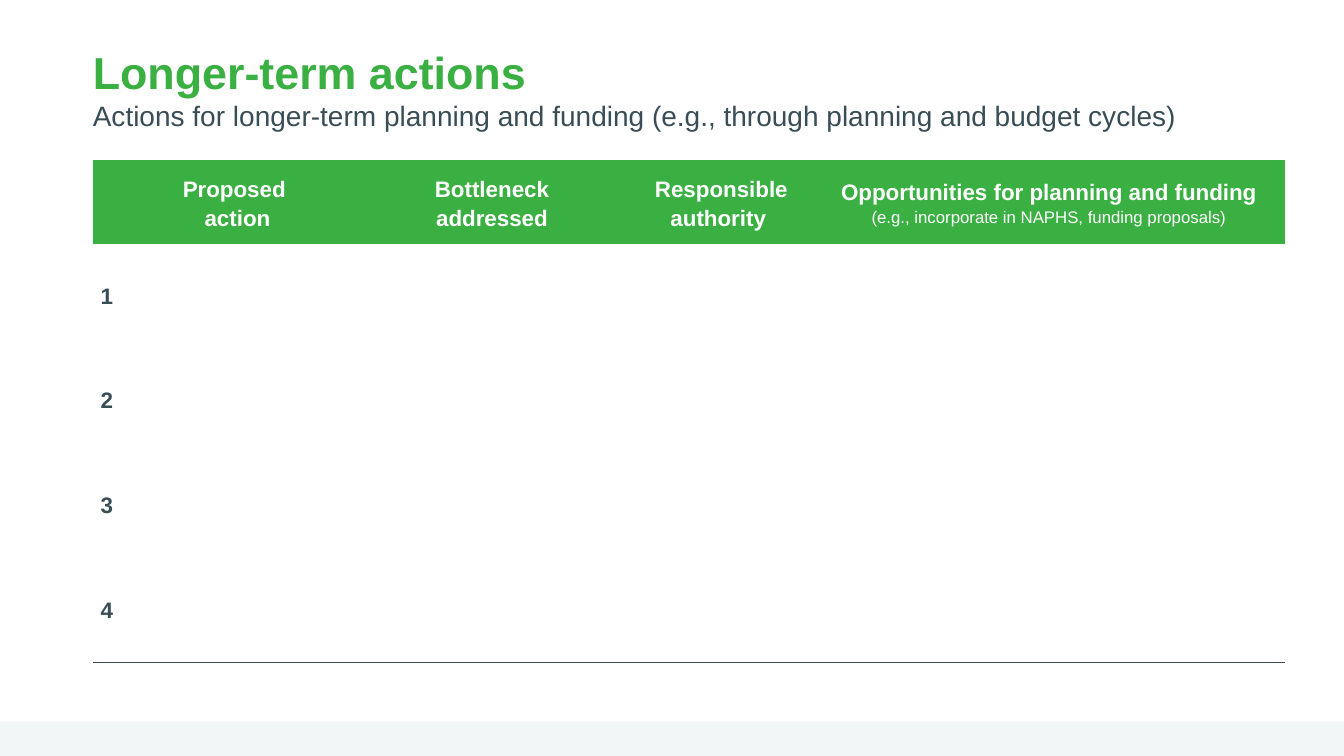
from dataclasses import dataclass

from lxml import etree
from pptx import Presentation, util as u
from pptx.dml.color import RGBColor
from pptx.enum import shapes, text
from pptx.oxml.ns import qn

PX = 9144  # EMU in one px, 100 px to the inch


@dataclass(frozen=True)
class Theme:
    font: str = "Arial"
    green: str = "3BB042"
    slate: str = "384D56"
    purple: str = "6C4492"
    white: str = "FFFFFF"
    footer: str = "F2F6F7"
    title_size: int = 32
    subtitle_size: int = 20
    table_size: int = 16
    note_size: int = 12


THEME = Theme()
COLUMNS = [28, 231, 274, 181, 469]
ROWS = [83, 104, 104, 104, 103]
# Each heading is a list of paragraphs; \v breaks a line within one
HEADINGS = [
    [],
    ["Proposed \vaction"],
    ["Bottleneck", "addressed"],
    ["Responsible\vauthority\u00a0".replace("\u00a0", " ")],
    ["Opportunities for planning and funding\v"
     "(e.g., incorporate in NAPHS, funding proposals)"],
]


def px(length):
    return u.Emu(length * PX)


def style(run, size, color, bold):
    font = run.font
    font.name = THEME.font
    font.size = u.Pt(size)
    font.bold = bold
    font.color.rgb = RGBColor.from_string(color)


def set_margins(target, horizontal, vertical):
    target.margin_left = target.margin_right = px(horizontal)
    target.margin_top = target.margin_bottom = px(vertical)


def set_borders(cell, bottom_color=None):
    """Leave only a bottom rule, or no rule at all."""
    properties = cell._tc.get_or_add_tcPr()
    for index, side in enumerate(("lnL", "lnR", "lnT", "lnB")):
        line = etree.Element(qn(f"a:{side}"), w=str(u.Pt(1)))
        if side == "lnB" and bottom_color:
            fill = etree.SubElement(line, qn("a:solidFill"))
            etree.SubElement(fill, qn("a:srgbClr"), val=bottom_color)
        else:
            etree.SubElement(line, qn("a:noFill"))
        properties.insert(index, line)


def add_footer(slide, left, top, width, height):
    bar = slide.shapes.add_shape(
        shapes.MSO_SHAPE.RECTANGLE, px(left), px(top), px(width), px(height))
    bar.shadow.inherit = False
    bar.fill.solid()
    bar.fill.fore_color.rgb = RGBColor.from_string(THEME.footer)
    bar.line.fill.background()


def add_title(slide, left, top, width, height):
    title = slide.shapes.title
    title.left, title.top = px(left), px(top)
    title.width, title.height = px(width), px(height)
    frame = title.text_frame
    frame.word_wrap = True
    frame.auto_size = text.MSO_AUTO_SIZE.NONE
    frame.vertical_anchor = text.MSO_ANCHOR.TOP
    set_margins(frame, 0, 0)
    frame.margin_top = px(4)
    frame.text = ("Longer-term actions \vActions for longer-term planning and "
                  "funding (e.g., through planning and budget cycles)")
    paragraph = frame.paragraphs[0]
    paragraph.alignment = text.PP_ALIGN.LEFT
    heading, subtitle = paragraph.runs
    style(heading, THEME.title_size, THEME.green, True)
    style(subtitle, THEME.subtitle_size, THEME.slate, False)


def fill_cell(cell, paragraphs, color, line_spacing):
    cell.vertical_anchor = text.MSO_ANCHOR.MIDDLE
    cell.text_frame.text = "\n".join(paragraphs)
    for paragraph in cell.text_frame.paragraphs:
        paragraph.alignment = text.PP_ALIGN.CENTER
        paragraph.line_spacing = line_spacing
        for run in paragraph.runs:
            style(run, THEME.table_size, color, True)


def add_actions_table(slide, left, top):
    table = slide.shapes.add_table(
        len(ROWS), len(COLUMNS), px(left), px(top),
        px(sum(COLUMNS)), px(sum(ROWS))).table
    table.first_row = table.horz_banding = False
    for column, width in zip(table.columns, COLUMNS):
        column.width = px(width)
    for row, height in zip(table.rows, ROWS):
        row.height = px(height)

    # Header row
    for column, heading in enumerate(HEADINGS):
        cell = table.cell(0, column)
        set_margins(cell, 7, 0)
        fill_cell(cell, heading, THEME.white, 1.15)
        cell.fill.solid()
        cell.fill.fore_color.rgb = RGBColor.from_string(THEME.green)
        set_borders(cell)
    note = table.cell(0, len(COLUMNS) - 1).text_frame.paragraphs[0].runs[-1]
    style(note, THEME.note_size, THEME.white, False)

    # Numbered rows
    last = len(ROWS) - 1
    for row in range(1, len(ROWS)):
        for column in range(len(COLUMNS)):
            cell = table.cell(row, column)
            set_margins(cell, 5, 5)
            cell.fill.background()
            set_borders(cell, THEME.slate if row == last else THEME.purple)
        fill_cell(table.cell(row, 0), [str(row)], THEME.slate, 1.0)


def main():
    presentation = Presentation()
    presentation.slide_width, presentation.slide_height = px(1333), px(750)
    slide = presentation.slides.add_slide(presentation.slide_layouts[5])
    add_footer(slide, 0, 716, 1333, 34)
    add_title(slide, 92, 40, 1150, 119)
    add_actions_table(slide, 92, 159)
    presentation.save("out.pptx")


if __name__ == "__main__":
    main()
